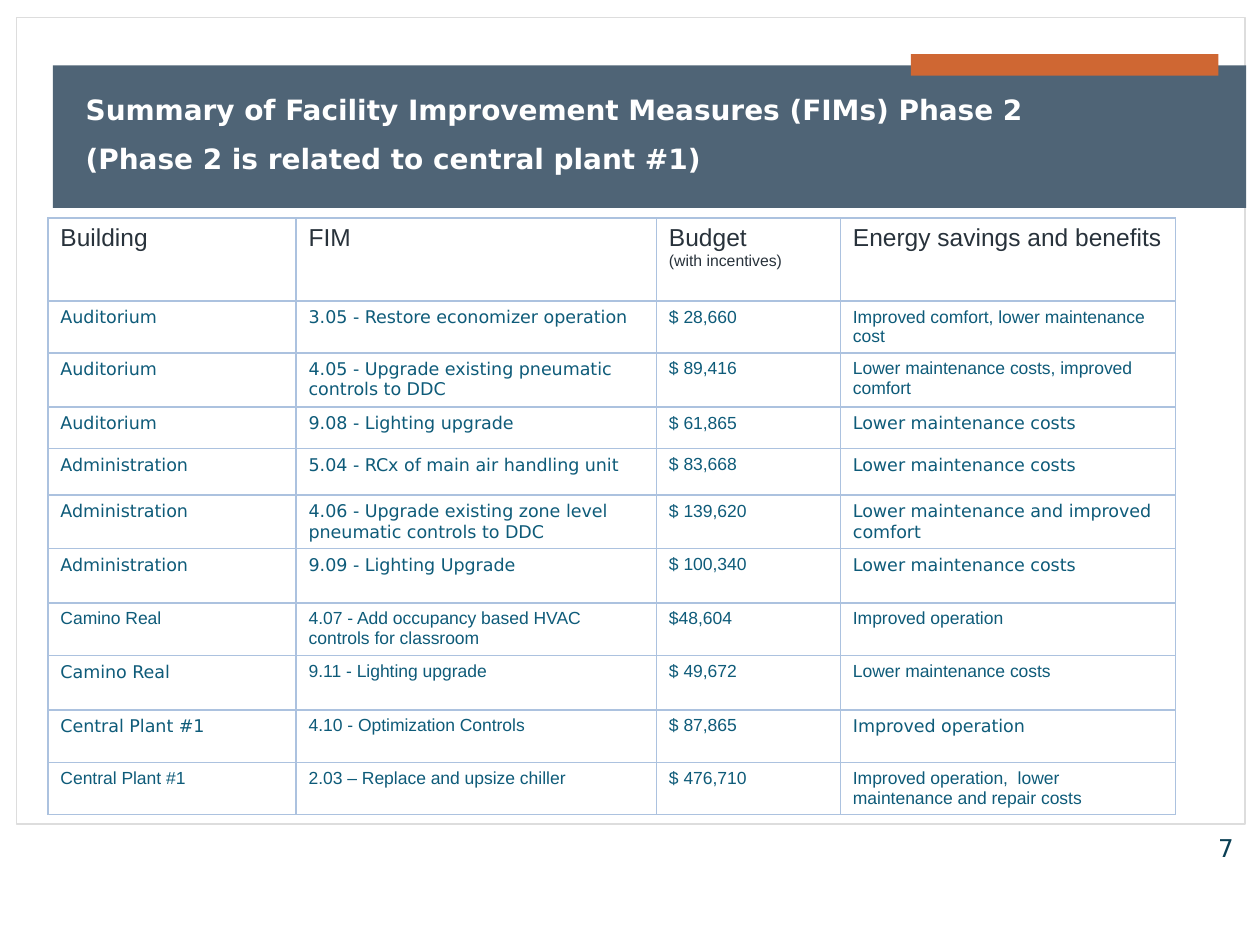
"""Build the Phase 2 facility improvement summary slide."""
import pptx
import pptx.dml.color
import pptx.enum.shapes
import pptx.enum.text
import pptx.oxml
import pptx.oxml.ns
import pptx.util

INCH = pptx.util.Inches
ALIGN = pptx.enum.text.PP_ALIGN
ANCHOR = pptx.enum.text.MSO_ANCHOR
FONTS = {"A": "Arial", "D": "DejaVu Sans"}
BORDER = "ACC2DF"

TITLE = [
    "Summary of Facility Improvement Measures (FIMs) Phase 2",
    "(Phase 2 is related to central plant #1)",
]
PANELS = [
    ((0.13, 0.14, 9.75, 6.4), "FFFFFF", "DDDDDD"),
    ((0.42, 0.52, 9.47, 1.13), "4F6476", None),
    ((7.23, 0.43, 2.44, 0.17), "CF6733", None),
]
COLUMN_WIDTHS = [1.97, 2.86, 1.46, 2.66]
HEADER_HEIGHT = 0.66
HEADINGS = ["Building", "FIM", "Budget", "Energy savings and benefits"]
BUDGET_NOTE = "(with incentives)"
# Each measure: row height, font of each column, cell wording
MEASURES = [
    (0.41, "DDAA", ["Auditorium", "3.05 - Restore economizer operation",
                    "$ 28,660", "Improved comfort, lower maintenance cost"]),
    (0.43, "DDAA", ["Auditorium", "4.05 - Upgrade existing pneumatic controls to DDC",
                    "$ 89,416", "Lower maintenance costs, improved comfort"]),
    (0.33, "DDAD", ["Auditorium", "9.08 - Lighting upgrade",
                    "$ 61,865", "Lower maintenance costs"]),
    (0.37, "DDAD", ["Administration", "5.04 - RCx of main air handling unit",
                    "$ 83,668", "Lower maintenance costs"]),
    (0.42, "DDAD", ["Administration", "4.06 - Upgrade existing zone level pneumatic controls to DDC",
                    "$ 139,620", "Lower maintenance and improved comfort"]),
    (0.43, "DDAD", ["Administration", "9.09 - Lighting Upgrade",
                    "$ 100,340", "Lower maintenance costs"]),
    (0.42, "AAAA", ["Camino Real", "4.07 - Add occupancy based HVAC controls for classroom",
                    "$48,604", "Improved operation"]),
    (0.43, "DAAA", ["Camino Real", "9.11 - Lighting upgrade",
                    "$ 49,672", "Lower maintenance costs"]),
    (0.42, "DAAD", ["Central Plant #1", "4.10 - Optimization Controls",
                    "$ 87,865", "Improved operation"]),
    (0.41, "AAAA", ["Central Plant #1", "2.03 – Replace and upsize chiller",
                    "$ 476,710", "Improved operation,  lower maintenance and repair costs"]),
]


def rgb(value):
    """Turn a hex string into a colour."""
    return pptx.dml.color.RGBColor.from_string(value)


def add_run(paragraph, text, size, font, color, bold=False):
    """Append one formatted run."""
    run = paragraph.add_run()
    run.text = text
    run.font.size = pptx.util.Pt(size)
    run.font.name = FONTS[font]
    run.font.color.rgb = rgb(color)
    run.font.bold = bold


def add_panel(slide, box, fill, outline):
    """Draw one background rectangle."""
    panel = slide.shapes.add_shape(
        pptx.enum.shapes.MSO_SHAPE.RECTANGLE, *map(INCH, box))
    panel.shadow.inherit = False
    panel.fill.solid()
    panel.fill.fore_color.rgb = rgb(fill)
    if outline:
        panel.line.color.rgb = rgb(outline)
        panel.line.width = pptx.util.Pt(1)
    else:
        panel.line.fill.background()


def style_cell(cell):
    """Give a cell thin borders and no fill."""
    properties = cell._tc.get_or_add_tcPr()
    for side in "LRTB":
        properties.append(pptx.oxml.parse_xml(
            f'<a:ln{side} {pptx.oxml.ns.nsdecls("a")} w="12700"><a:solidFill>'
            f'<a:srgbClr val="{BORDER}"/></a:solidFill></a:ln{side}>'))
    cell.fill.background()


def add_title(slide):
    """Place the two-line title above the banner."""
    title = slide.shapes.title
    title.left, title.top, title.width, title.height = map(INCH, (0.58, 0.56, 9, 0.88))
    title.element.getparent().append(title.element)
    frame = title.text_frame
    frame.word_wrap = True
    frame.auto_size = pptx.enum.text.MSO_AUTO_SIZE.NONE
    frame.vertical_anchor = ANCHOR.BOTTOM
    paragraph = frame.paragraphs[0]
    paragraph.alignment = ALIGN.LEFT
    paragraph.line_spacing = pptx.util.Pt(28)
    for index, line in enumerate(TITLE):
        if index:
            paragraph.add_line_break()
        add_run(paragraph, line, 16, "D", "FFFFFF", bold=True)


def add_measures(slide):
    """Add the table of improvement measures."""
    heights = [HEADER_HEIGHT] + [height for height, _, _ in MEASURES]
    table = slide.shapes.add_table(
        len(heights), len(COLUMN_WIDTHS), INCH(0.38), INCH(1.73),
        INCH(sum(COLUMN_WIDTHS)), INCH(sum(heights))).table
    table.first_row = table.horz_banding = False
    for column, width in zip(table.columns, COLUMN_WIDTHS):
        column.width = INCH(width)
    for row, height in zip(table.rows, heights):
        row.height = INCH(height)
    for cell in table.iter_cells():
        style_cell(cell)
    for column, heading in enumerate(HEADINGS):
        add_run(table.cell(0, column).text_frame.paragraphs[0], heading, 14, "A", "28323B")
    note = table.cell(0, HEADINGS.index("Budget")).text_frame.add_paragraph()
    add_run(note, BUDGET_NOTE, 9, "A", "28323B")
    for row, (_, fonts, texts) in enumerate(MEASURES, start=1):
        for column, (font, text) in enumerate(zip(fonts, texts)):
            add_run(table.cell(row, column).text_frame.paragraphs[0], text, 10, font, "0E5B79")


def add_page_number(slide):
    """Add the page number at the lower right."""
    box = slide.shapes.add_textbox(*map(INCH, (8.95, 6.56, 0.94, 0.34)))
    box.text_frame.word_wrap = True
    paragraph = box.text_frame.paragraphs[0]
    paragraph.alignment = ALIGN.RIGHT
    add_run(paragraph, "7", 14, "D", "0A3F54")


def main():
    """Assemble and save the slide."""
    deck = pptx.Presentation()
    deck.slide_width, deck.slide_height = INCH(10), INCH(7.5)
    slide = deck.slides.add_slide(deck.slide_layouts[5])
    for panel in PANELS:
        add_panel(slide, *panel)
    add_title(slide)
    add_measures(slide)
    add_page_number(slide)
    deck.save("out.pptx")


if __name__ == "__main__":
    main()
